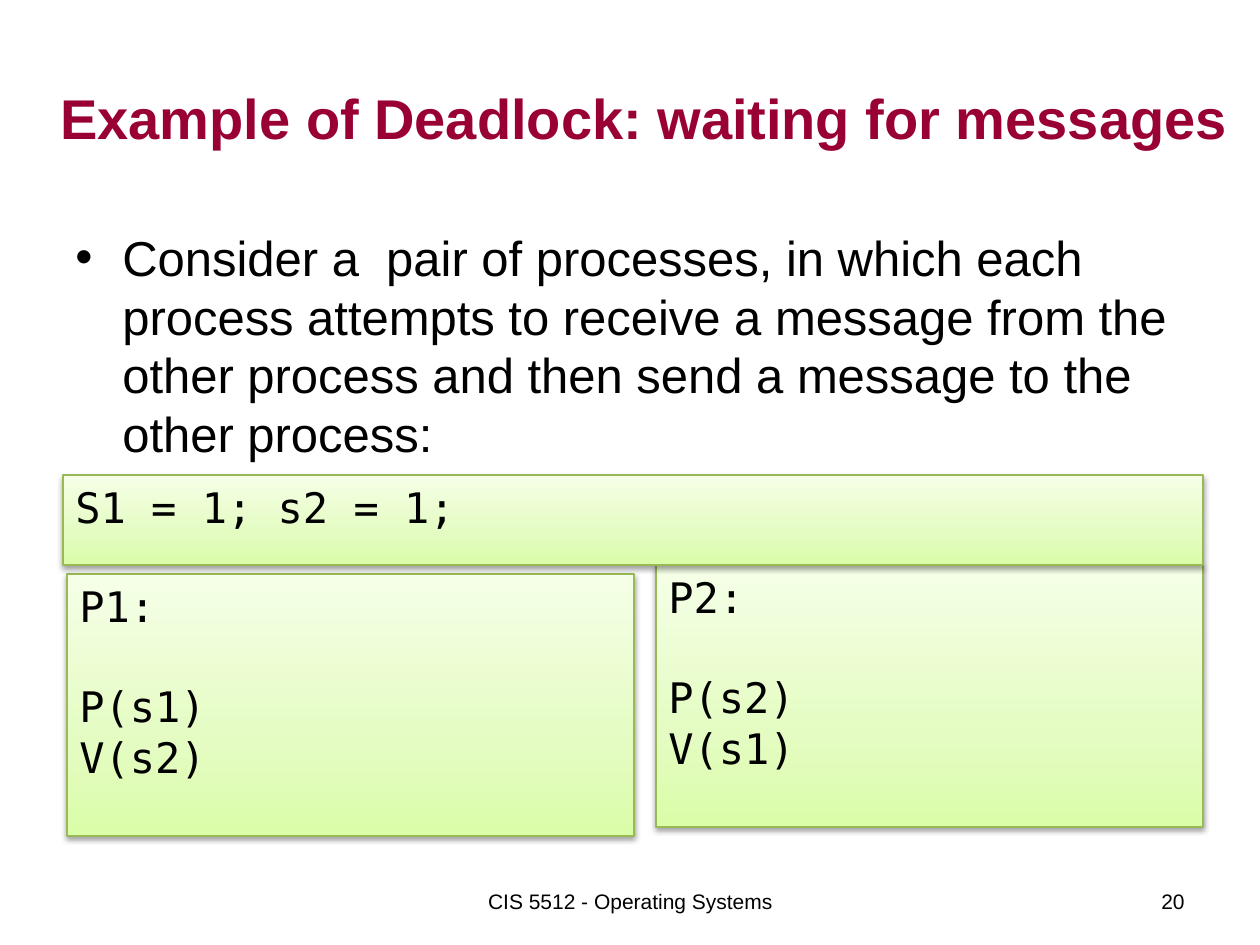
from copy import deepcopy
from dataclasses import dataclass

from lxml.etree import SubElement
from pptx import Presentation
from pptx.dml.color import RGBColor
from pptx.enum.shapes import MSO_SHAPE as Shape
from pptx.enum.text import MSO_ANCHOR as Anchor, PP_ALIGN as Align
from pptx.oxml.ns import qn
from pptx.util import Emu, Pt

EMU_PER_PX = 914400 / 126


@dataclass(frozen=True)
class Theme:
    font: str = "Arial"
    code_font: str = "DejaVu Sans Mono"
    title_size: int = 32
    body_size: int = 28
    code_size: int = 24
    footer_size: int = 12
    title: str = "990033"
    ink: str = "000000"
    border: str = "98B955"
    gradient: tuple = ((0, "DAFDA7"), (0.35, "E4FCC2"), (1, "F5FFE7"))


@dataclass(frozen=True)
class Box:
    left: int
    top: int
    width: int
    height: int


@dataclass(frozen=True)
class Label:
    box: Box
    text: str
    size: int
    color: str
    bold: bool = False
    align: Align = Align.LEFT
    anchor: Anchor = Anchor.MIDDLE
    bullet: bool = False


@dataclass(frozen=True)
class CodePanel:
    box: Box
    groups: tuple  # groups of lines, set one line apart


THEME = Theme()

LABELS = (
    Label(Box(48, 38, 1197, 158), "Example of Deadlock: waiting for messages",
          THEME.title_size, THEME.title, bold=True),
    Label(Box(63, 221, 1134, 624),
          "Consider a  pair of processes, in which each process attempts to "
          "receive a message from the other process and then send a message "
          "to the other process:",
          THEME.body_size, THEME.ink, anchor=Anchor.TOP, bullet=True),
    Label(Box(431, 876, 399, 50), "CIS 5512 - Operating Systems",
          THEME.footer_size, THEME.ink, align=Align.CENTER),
    Label(Box(903, 876, 294, 50), "20",
          THEME.footer_size, THEME.ink, align=Align.RIGHT),
)

PANELS = (
    CodePanel(Box(67, 574, 567, 262), (("P1:",), ("P(s1)", "V(s2)"))),
    CodePanel(Box(656, 565, 547, 262), (("P2:",), ("P(s2)", "V(s1)"))),
    CodePanel(Box(63, 475, 1140, 90), (("S1 = 1; s2 = 1;",),)),
)


def px(value: int) -> Emu:
    return Emu(round(value * EMU_PER_PX))


def bounds(box: Box) -> tuple:
    return px(box.left), px(box.top), px(box.width), px(box.height)


def add_run(p, text: str, font: str, size: int, color: str, bold=False) -> None:
    r = p.add_run()
    r.text = text
    r.font.name = font
    r.font.size = Pt(size)
    r.font.bold = bold
    r.font.color.rgb = RGBColor.from_string(color)


def add_bullet(p, indent: int) -> None:
    pPr = p._p.get_or_add_pPr()
    pPr.set("marL", str(px(indent)))
    pPr.set("indent", str(-px(indent)))
    SubElement(pPr, qn("a:buFont"), typeface=THEME.font)
    SubElement(pPr, qn("a:buChar"), char="•")


def draw_label(slide, label: Label) -> None:
    tf = slide.shapes.add_textbox(*bounds(label.box)).text_frame
    tf.word_wrap = True
    tf.vertical_anchor = label.anchor
    p = tf.paragraphs[0]
    p.alignment = label.align
    if label.bullet:
        add_bullet(p, 47)
    add_run(p, label.text, THEME.font, label.size, label.color, label.bold)


def fill_gradient(sp) -> None:
    sp.fill.gradient()
    sp.fill.gradient_angle = 90
    stops = sp._element.spPr.find(".//" + qn("a:gsLst"))
    stops.append(deepcopy(stops[0]))
    for stop, (position, color) in zip(sp.fill.gradient_stops, THEME.gradient):
        stop.position = position
        stop.color.rgb = RGBColor.from_string(color)


def add_shadow(sp) -> None:
    """Cast a soft shadow straight down."""
    sp.shadow.inherit = False
    effects = sp._element.spPr.find(qn("a:effectLst"))
    shadow = SubElement(effects, qn("a:outerShdw"), blurRad="40000",
                        dist="20000", dir="5400000", rotWithShape="0")
    color = SubElement(shadow, qn("a:srgbClr"), val=THEME.ink)
    SubElement(color, qn("a:alpha"), val="38000")


def draw_panel(slide, panel: CodePanel) -> None:
    sp = slide.shapes.add_shape(Shape.RECTANGLE, *bounds(panel.box))
    fill_gradient(sp)
    sp.line.color.rgb = RGBColor.from_string(THEME.border)
    sp.line.width = Pt(0.75)
    add_shadow(sp)
    tf = sp.text_frame
    tf.word_wrap = True
    tf.vertical_anchor = Anchor.TOP
    for g, lines in enumerate(panel.groups):
        for i, line in enumerate(lines):
            first = g == i == 0
            p = tf.paragraphs[0] if first else tf.add_paragraph()
            p.alignment = Align.LEFT
            if g and i == 0:
                p.space_before = Pt(1.2 * THEME.code_size)
            add_run(p, line, THEME.code_font, THEME.code_size, THEME.ink)


def main() -> None:
    prs = Presentation()
    prs.slide_width, prs.slide_height = px(1260), px(945)
    slide = prs.slides.add_slide(prs.slide_layouts[6])
    for label in LABELS:
        draw_label(slide, label)
    for panel in PANELS:
        draw_panel(slide, panel)
    prs.save("out.pptx")


if __name__ == "__main__":
    main()
